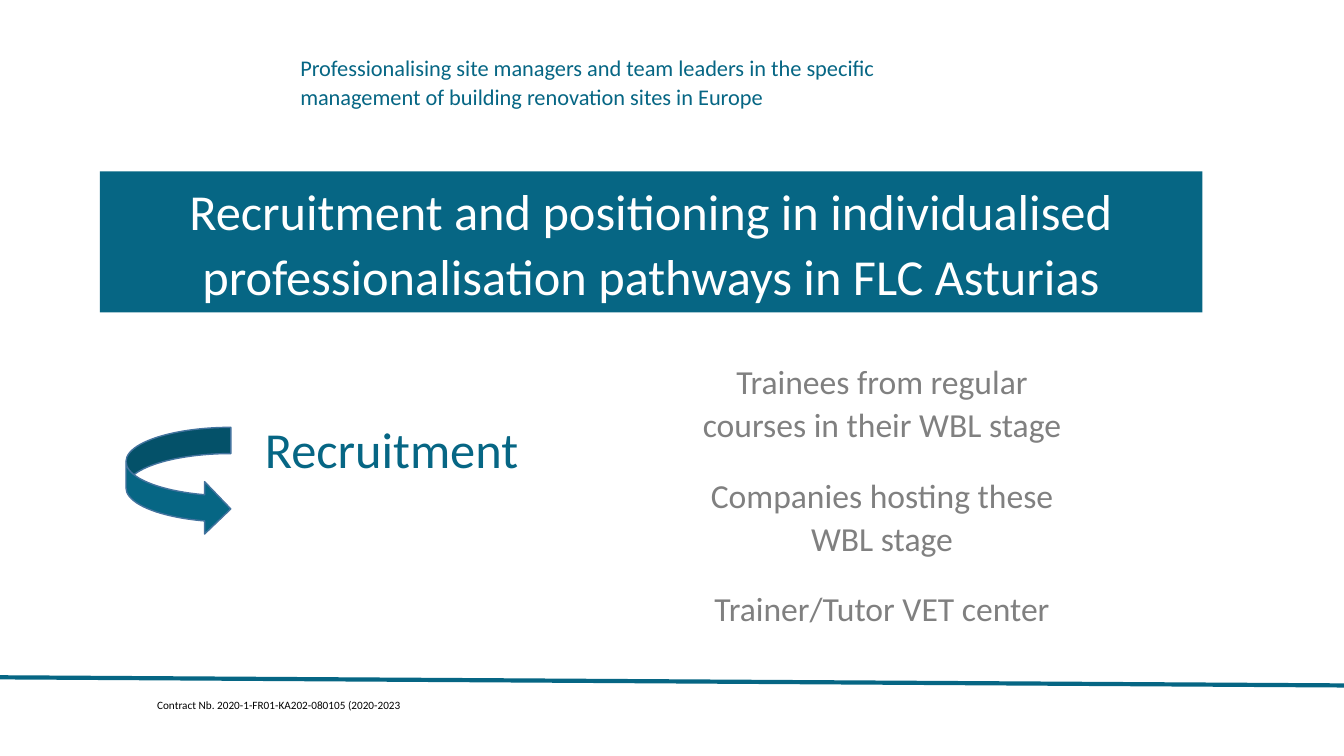
import pptx
import pptx.util
from lxml import etree
from pptx.dml.color import RGBColor
from pptx.enum.shapes import MSO_CONNECTOR, MSO_SHAPE
from pptx.enum.text import MSO_ANCHOR, MSO_AUTO_SIZE, PP_ALIGN
from pptx.oxml.ns import qn

Pt = pptx.util.Pt

TEAL = RGBColor(0x06, 0x66, 0x84)
OUTLINE_BLUE = RGBColor(0x43, 0x73, 0x9E)
GRAY = RGBColor(0x80, 0x80, 0x80)
BLACK = RGBColor(0, 0, 0)
WHITE = RGBColor(0xFF, 0xFF, 0xFF)

FONT = "Calibri"
SLIDE_WIDTH, SLIDE_HEIGHT = 960, 540
LINE_SPACING = 1.07

# Top and height of each box in the right-hand column
RECRUITMENT_SOURCES = [
    ("Trainees from regular courses in their WBL stage", 252, 69.8),
    ("Companies hosting these WBL stage", 333.4, 69.8),
    ("Trainer/Tutor VET center", 414.7, 36.7),
]


def write_text(shape, text, size, color, align=PP_ALIGN.CENTER,
               spacing=LINE_SPACING, wrap=True):
    frame = shape.text_frame
    frame.text = text
    frame.word_wrap = wrap
    frame.auto_size = MSO_AUTO_SIZE.SHAPE_TO_FIT_TEXT
    frame.vertical_anchor = MSO_ANCHOR.TOP
    para = frame.paragraphs[0]
    para.alignment = align
    para.line_spacing = spacing
    span = para.runs[0]
    span.font.name = FONT
    span.font.size = Pt(size)
    span.font.color.rgb = color


def add_text(page, left, top, width, height, text, size, color, **options):
    box = page.shapes.add_textbox(Pt(left), Pt(top), Pt(width), Pt(height))
    write_text(box, text, size, color, **options)


def add_filled_shape(page, kind, left, top, width, height):
    """Add a teal shape with neither outline nor shadow."""
    shape = page.shapes.add_shape(kind, Pt(left), Pt(top), Pt(width), Pt(height))
    shape.shadow.inherit = False
    shape.fill.solid()
    shape.fill.fore_color.rgb = TEAL
    shape.line.fill.background()
    return shape


def add_footer_line(page):
    line = page.shapes.add_connector(
        MSO_CONNECTOR.STRAIGHT, Pt(0), Pt(483.8), Pt(SLIDE_WIDTH), Pt(489.6))
    line.line.color.rgb = TEAL
    line.line.width = Pt(3)
    etree.SubElement(line._element.spPr, qn("a:effectLst"))


def main():
    deck = pptx.Presentation()
    deck.slide_width = Pt(SLIDE_WIDTH)
    deck.slide_height = Pt(SLIDE_HEIGHT)
    page = deck.slides.add_slide(deck.slide_layouts[6])

    add_text(page, 207.4, 33.8, 486.7, 47.5,
             "Professionalising site managers and team leaders in the specific "
             "management of building renovation sites in Europe",
             16, TEAL, align=PP_ALIGN.LEFT)
    add_text(page, 105.1, 495.4, 188.6, 17.3,
             "Contract Nb. 2020-1-FR01-KA202-080105 (2020-2023",
             8, BLACK, align=PP_ALIGN.LEFT, spacing=1.0, wrap=False)
    add_footer_line(page)

    banner = add_filled_shape(page, MSO_SHAPE.RECTANGLE, 71.3, 122.4, 787.7, 100.8)
    write_text(banner,
               "Recruitment and positioning in individualised "
               "professionalisation pathways in FLC Asturias",
               36, WHITE)

    add_text(page, 164.9, 292.3, 229.7, 51.8, "Recruitment", 36, TEAL)
    arrow = add_filled_shape(page, MSO_SHAPE.CURVED_RIGHT_ARROW,
                             90, 305.3, 74.9, 77)
    arrow.line.color.rgb = OUTLINE_BLUE
    arrow.line.width = Pt(1)

    for text, top, height in RECRUITMENT_SOURCES:
        add_text(page, 483.1, top, 293.8, height, text, 24, GRAY)

    deck.save("out.pptx")


if __name__ == "__main__":
    main()
